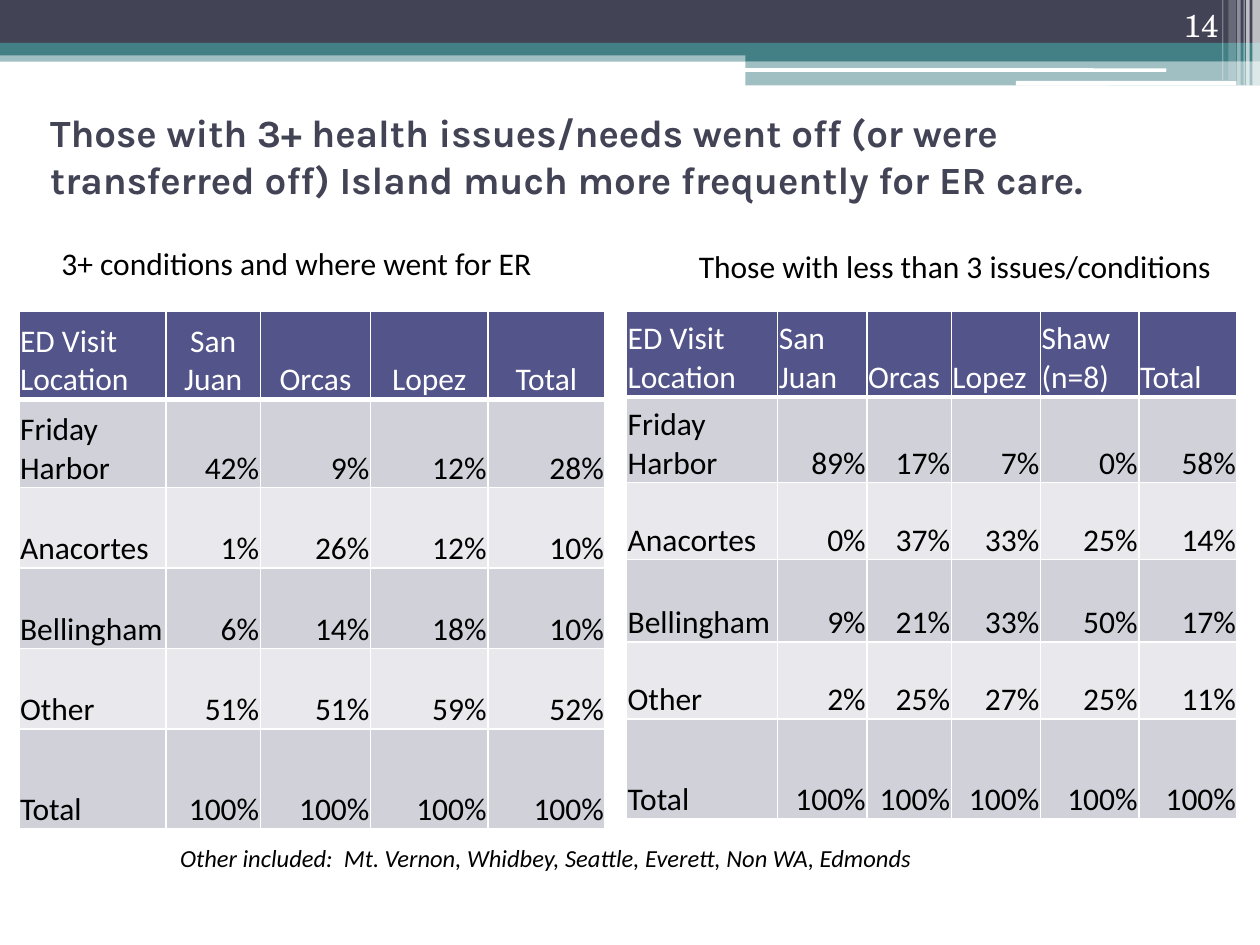
from lxml.etree import SubElement
from pptx import Presentation
from pptx.dml.color import RGBColor
from pptx.enum.shapes import MSO_SHAPE
from pptx.enum.text import MSO_ANCHOR, PP_ALIGN
from pptx.oxml import parse_xml
from pptx.oxml.ns import nsdecls, qn
from pptx.util import Pt

COLORS = {
    "navy": "424456", "teal": "438086", "white": "FFFFFF", "black": "000000",
    "header": "53548A", "odd_row": "D1D1DA", "even_row": "E9E9ED",
}

ISLAND_HEADERS = ["ED Visit Location", "San Juan", "Orcas", "Lopez"]
MANY_ISSUES = [
    ISLAND_HEADERS + ["Total"],
    ["Friday Harbor", "42%", "9%", "12%", "28%"],
    ["Anacortes", "1%", "26%", "12%", "10%"],
    ["Bellingham", "6%", "14%", "18%", "10%"],
    ["Other", "51%", "51%", "59%", "52%"],
    ["Total"] + ["100%"] * 4,
]
FEW_ISSUES = [
    ISLAND_HEADERS + ["Shaw (n=8)", "Total"],
    ["Friday Harbor", "89%", "17%", "7%", "0%", "58%"],
    ["Anacortes", "0%", "37%", "33%", "25%", "14%"],
    ["Bellingham", "9%", "21%", "33%", "50%", "17%"],
    ["Other", "2%", "25%", "27%", "25%", "11%"],
    ["Total"] + ["100%"] * 5,
]


def rgb(color):
    return RGBColor.from_string(COLORS[color])


def add_bar(slide, box, color, opacity=100, preset=MSO_SHAPE.RECTANGLE):
    bar = slide.shapes.add_shape(preset, *map(Pt, box))
    bar.shadow.inherit = False
    bar.line.fill.background()
    bar.fill.solid()
    bar.fill.fore_color.rgb = rgb(color)
    if opacity < 100:
        tint = bar.fill._xPr.find(".//" + qn("a:srgbClr"))
        SubElement(tint, qn("a:alpha"), val=str(opacity * 1000))


def add_banner(slide, box):
    left, top, width, height = box
    right = left + width
    add_bar(slide, (left, top + 28.8, width, 6.5), "teal", 50)
    add_bar(slide, (left, top, width, 24.5), "navy")
    add_bar(slide, (left, top + 24.5, width, 7.2), "teal")

    tab_left = left + 426
    add_bar(slide, (tab_left, top + 28, right - tab_left, 7), "teal")
    add_bar(slide, (tab_left, top + 34.8, right - tab_left, 14), "teal", 50)
    for x, y, length, thickness in [(425.5, 39, 241, 2), (580.5, 46.3, 126, 2.6)]:
        add_bar(slide, (left + x, top + y, length, thickness), "white",
                preset=MSO_SHAPE.ROUNDED_RECTANGLE)

    # Offset from the right edge, width, height, opacity
    stripes = [(4.3, 4.3, height, 65), (7.9, 2, height, 65), (9.4, 0.7, height, 60),
               (13, 2, height, 40), (18, 4.3, 46, 20), (21.6, 0.7, 46, 30)]
    for offset, stripe_width, stripe_height, opacity in stripes:
        add_bar(slide, (right - offset, top, stripe_width, stripe_height),
                "white", opacity)


def add_text(slide, box, text, size=18, font="Calibri", color="black", bold=False,
             italic=False, align=PP_ALIGN.LEFT, anchor=MSO_ANCHOR.TOP, wrap=True):
    frame = slide.shapes.add_textbox(*map(Pt, box)).text_frame
    frame.word_wrap = wrap
    frame.vertical_anchor = anchor
    frame.text = text
    style_paragraph(frame.paragraphs[0], size, font, color, align, bold, italic)


def style_paragraph(paragraph, size, font, color, align, bold=False, italic=False):
    paragraph.alignment = align
    for run in paragraph.runs:
        run.font.size = Pt(size)
        run.font.name = font
        run.font.bold = bold
        run.font.italic = italic
        run.font.color.rgb = rgb(color)


def set_borders(cell, top, bottom):
    properties = cell._tc.get_or_add_tcPr()
    sides = {"lnL": 1, "lnR": 1, "lnT": top, "lnB": bottom}
    for position, (side, weight) in enumerate(sides.items()):
        properties.insert(position, parse_xml(
            f'<a:{side} {nsdecls("a")} w="{Pt(weight)}"><a:solidFill>'
            f'<a:srgbClr val="{COLORS["white"]}"/></a:solidFill></a:{side}>'))


def add_visit_table(slide, box, rows, column_widths, row_heights, header_align):
    table = slide.shapes.add_table(len(rows), len(rows[0]), *map(Pt, box)).table
    for column, width in zip(table.columns, column_widths):
        column.width = Pt(width)
    for row, height in zip(table.rows, row_heights):
        row.height = Pt(height)

    for r, values in enumerate(rows):
        for c, value in enumerate(values):
            cell = table.cell(r, c)
            cell.margin_left = cell.margin_right = cell.margin_top = Pt(0.7)
            cell.margin_bottom = Pt(0)
            cell.vertical_anchor = MSO_ANCHOR.BOTTOM
            cell.fill.solid()
            fill = "header" if r == 0 else "odd_row" if r % 2 else "even_row"
            cell.fill.fore_color.rgb = rgb(fill)
            set_borders(cell, top=3 if r == 1 else 1, bottom=3 if r == 0 else 1)
            cell.text_frame.text = value
            if c == 0:
                align = PP_ALIGN.LEFT
            else:
                align = header_align if r == 0 else PP_ALIGN.RIGHT
            style_paragraph(cell.text_frame.paragraphs[0], 18, "Calibri",
                            "white" if r == 0 else "black", align)


def main():
    presentation = Presentation()
    presentation.slide_width, presentation.slide_height = Pt(720), Pt(540)
    slide = presentation.slides.add_slide(presentation.slide_layouts[6])

    add_banner(slide, (0, 0, 720, 49))
    add_text(slide, (21.6, 46.8, 648, 84.2),
             "Those with 3+ health issues/needs went off (or were transferred off) "
             "Island much more frequently for ER care.",
             size=22, font="Karla", color="navy", bold=True, anchor=MSO_ANCHOR.MIDDLE)
    add_visit_table(slide, (10.8, 177.8, 335, 296.4), MANY_ISSUES,
                    [84, 54, 63, 67, 67], [50.4, 50.4, 46, 46, 46, 57],
                    PP_ALIGN.CENTER)
    add_visit_table(slide, (358, 177.8, 349, 290), FEW_ISSUES,
                    [86.4, 51, 48.2, 51, 56.2, 56.2], [49, 49, 44, 47, 44, 57],
                    PP_ALIGN.LEFT)
    add_text(slide, (643.7, 0, 59.8, 28.8), "14", font="TeX Gyre Schola",
             color="white", align=PP_ALIGN.RIGHT, anchor=MSO_ANCHOR.BOTTOM)
    add_text(slide, (28, 136, 286.6, 29), "3+ conditions and where went for ER",
             wrap=False)
    add_text(slide, (392.2, 137.6, 317, 29), "Those with less than 3 issues/conditions")
    add_text(slide, (95.8, 478, 577.4, 24.2),
             "Other included:  Mt. Vernon, Whidbey, Seattle, Everett, Non WA, Edmonds",
             size=14, italic=True)
    presentation.save("out.pptx")


if __name__ == "__main__":
    main()
